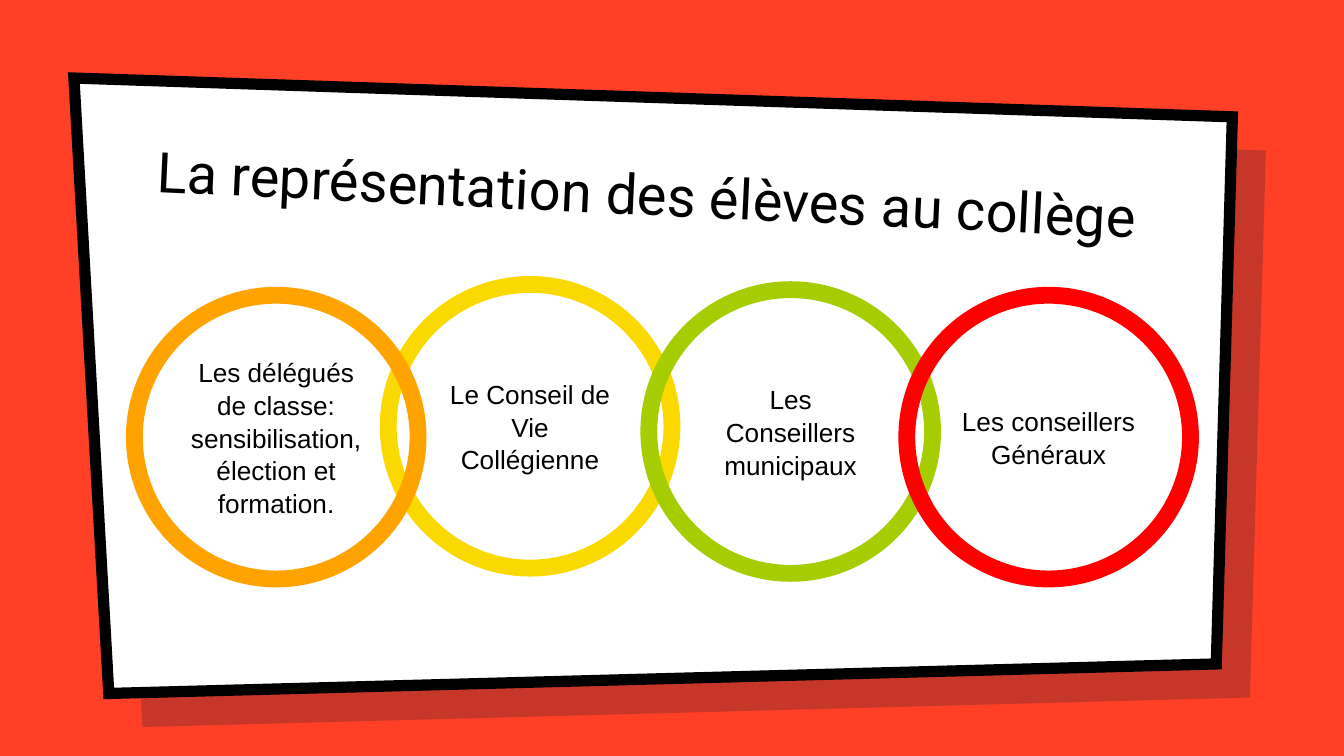
import pptx
import pptx.dml.color
import pptx.enum.text
import pptx.enum.shapes
import pptx.oxml.xmlchemy
import pptx.util
from lxml import etree

Pt = pptx.util.Pt
RGBColor = pptx.dml.color.RGBColor
Align = pptx.enum.text.PP_ALIGN
Anchor = pptx.enum.text.MSO_ANCHOR

COLORS = {
    "background": "FF4026", "shadow": "001936", "panel": "FFFFFF", "ink": "000000",
    "orange": "FFA300", "yellow": "FAD900", "green": "A6CD02", "red": "FF0000",
}
DRAWING = "http://schemas.openxmlformats.org/drawingml/2006/main"


def color(name):
    return RGBColor.from_string(COLORS[name])


def draw_panel(page, offset, fill):
    corners = [(39.6 + offset, 41.8 + offset), (660.2 + offset, 62.6 + offset),
               (651.6 + offset, 355.7 + offset), (58.3 + offset, 371.5 + offset)]
    points = [(Pt(x), Pt(y)) for x, y in corners]
    builder = page.shapes.build_freeform(*points[0])
    builder.add_line_segments(points[1:], close=True)
    panel = builder.convert_to_shape()
    panel.shadow.inherit = False
    panel.fill.solid()
    panel.fill.fore_color.rgb = color(fill)
    panel.line.fill.background()
    return panel


deck = pptx.Presentation()
deck.slide_width, deck.slide_height = Pt(720), Pt(405)
page = deck.slides.add_slide(deck.slide_layouts[5])
page.background.fill.solid()
page.background.fill.fore_color.rgb = color("background")

shadow = draw_panel(page, 18, "shadow")
shadow_color = shadow.fill._xPr.find(f".//{{{DRAWING}}}srgbClr")
etree.SubElement(shadow_color, f"{{{DRAWING}}}alpha", val="22000")

panel = draw_panel(page, 0, "panel")
panel.line.color.rgb = color("ink")
panel.line.width = Pt(6)
miter = etree.SubElement(panel.line._get_or_add_ln(), f"{{{DRAWING}}}miter")
miter.set("lim", "800000")

title = page.shapes.title
page.shapes._spTree.append(title._element)
title.left, title.top, title.width, title.height = Pt(77), Pt(69.1), Pt(553.7), Pt(59.8)
title.rotation = 2.7
frame = title.text_frame
frame.text = "La représentation des élèves au collège"
frame.word_wrap = True
frame.auto_size = pptx.enum.text.MSO_AUTO_SIZE.NONE
frame.vertical_anchor = Anchor.BOTTOM
frame.margin_left = frame.margin_right = frame.margin_top = frame.margin_bottom = Pt(7.2)
heading = frame.paragraphs[0]
heading.alignment = Align.LEFT
heading.font.name = "Roboto"
heading.font.size = Pt(30)
heading.font.color.rgb = color("ink")

rings = [
    (208, 152.4, "yellow", "Le Conseil de Vie Collégienne"),
    (72, 158.2, "orange", "Les délégués de classe: sensibilisation, élection et formation."),
    (347.6, 155.2, "green", "Les Conseillers municipaux"),
    (485.8, 158.2, "red", "Les conseillers Généraux"),
]
for left, top, outline, label in rings:
    ring = page.shapes.add_shape(pptx.enum.shapes.MSO_SHAPE.OVAL,
                                 Pt(left), Pt(top), Pt(152), Pt(152))
    ring.shadow.inherit = False
    ring.fill.background()
    ring.line.color.rgb = color(outline)
    ring.line.width = Pt(9)
    frame = ring.text_frame
    frame.text = label
    frame.word_wrap = True
    frame.vertical_anchor = Anchor.MIDDLE
    frame.margin_left = frame.margin_right = frame.margin_top = frame.margin_bottom = Pt(7.2)
    para = frame.paragraphs[0]
    para.alignment = Align.CENTER
    para.line_spacing = 1.04
    para.font.name = "Arial"
    para.font.size = Pt(14)
    para.font.color.rgb = color("ink")

deck.save("out.pptx")
